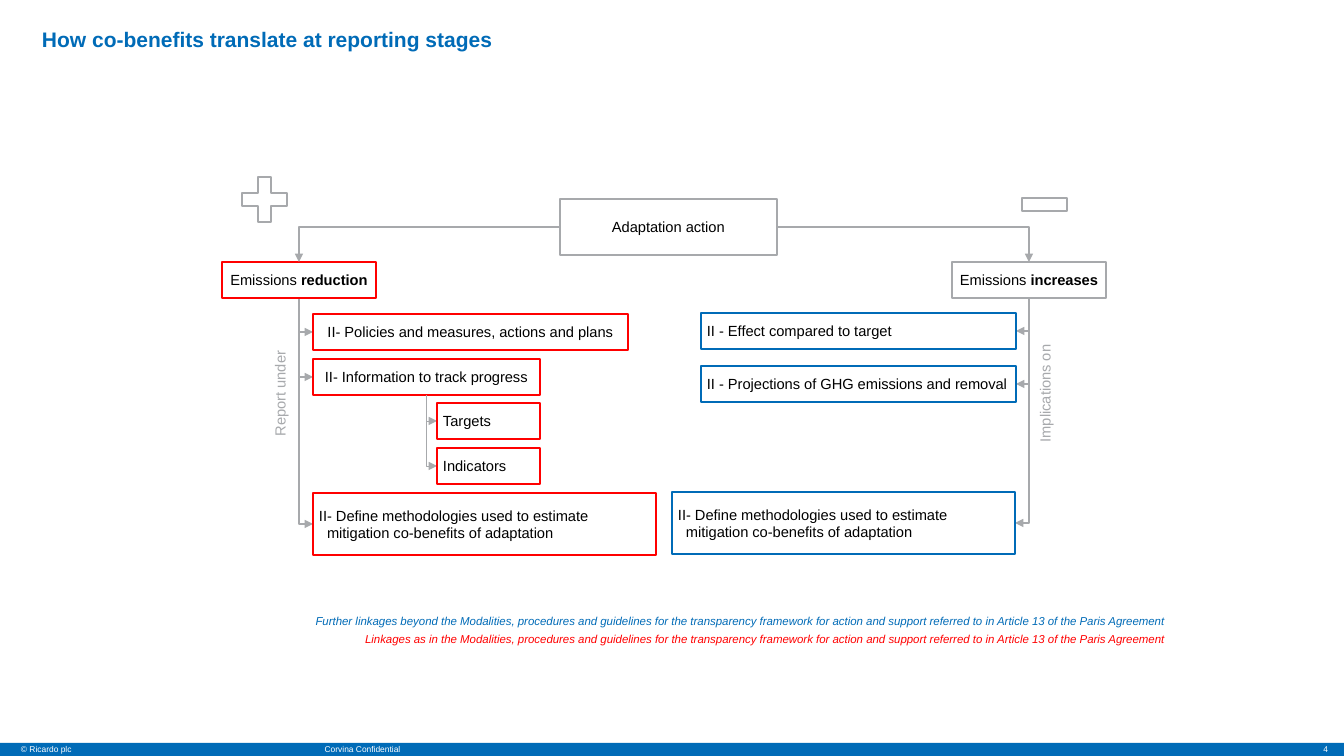
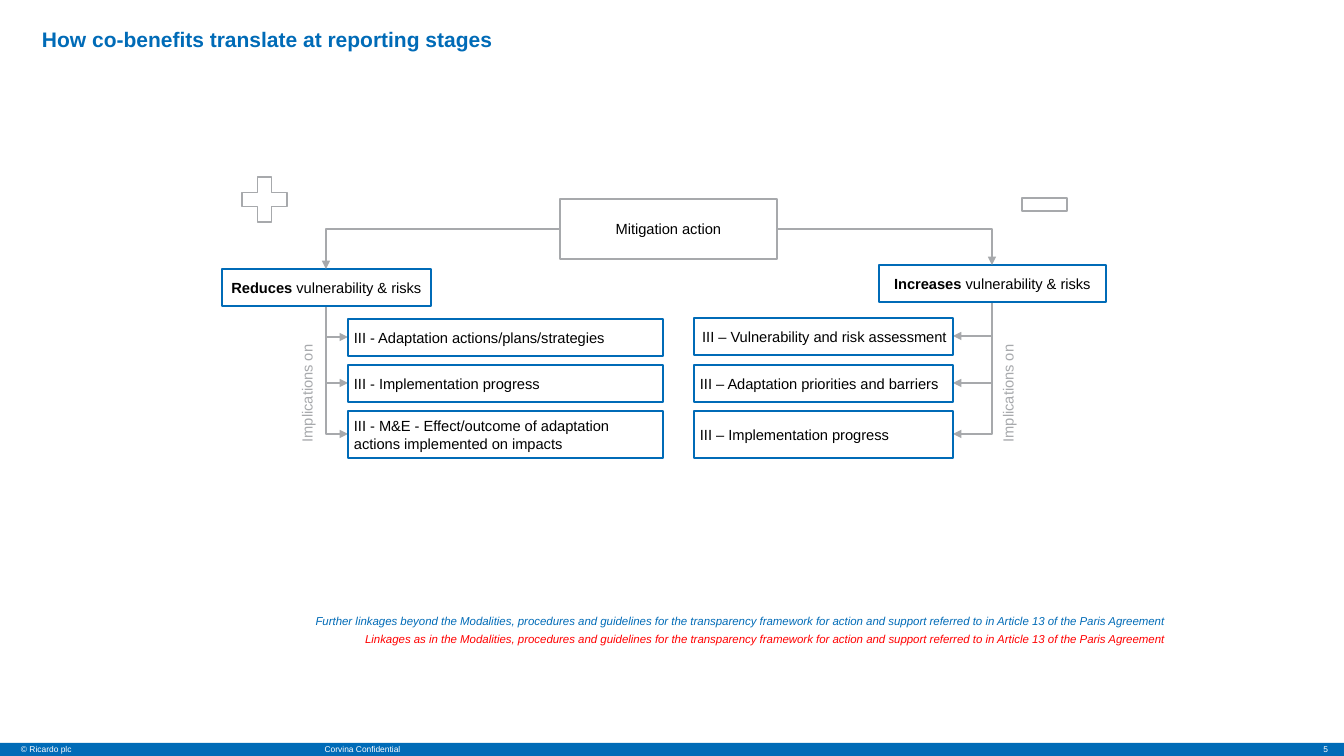
from dataclasses import dataclass

from lxml import etree
from pptx import Presentation
from pptx import util as u
from pptx.dml import color
from pptx.enum import shapes, text
from pptx.oxml import ns

SCALE = 12192000 / 1344
FONT = "Arial"
BLUE, RED, GREY, BLACK, WHITE = "006BB7", "FF0000", "A7A9AC", "000000", "FFFFFF"
LEFT, CENTER, RIGHT = text.PP_ALIGN.LEFT, text.PP_ALIGN.CENTER, text.PP_ALIGN.RIGHT
TITLE = "How co-benefits translate at reporting stages"
METHODS = "II- Define methodologies used to estimate mitigation co-benefits of adaptation"
SCOPE = (
    "the Modalities, procedures and guidelines for the transparency framework "
    "for action and support referred to in Article 13 of the Paris Agreement"
)


@dataclass
class Box:
    """A rectangle in px."""

    left: int
    top: int
    width: int
    height: int

    @property
    def center(self):
        """Return the horizontal middle."""
        return self.left + self.width // 2

    @property
    def middle(self):
        """Return the vertical middle."""
        return self.top + self.height // 2

    @property
    def right(self):
        """Return the right edge."""
        return self.left + self.width

    @property
    def bottom(self):
        """Return the bottom edge."""
        return self.top + self.height

    def inner(self, left, top, width, height):
        """Return a box placed relative to this one."""
        return Box(self.left + left, self.top + top, width, height)

    def emu(self):
        """Return left, top, width and height in EMU."""
        return [px(n) for n in (self.left, self.top, self.width, self.height)]


def px(length):
    """Turn px into EMU."""
    return u.Emu(round(length * SCALE))


def rgb(code):
    """Turn a hex string into a colour."""
    return color.RGBColor.from_string(code)


def write(frame, words, size=10.5, tint=BLACK, align=LEFT, bold=False, italic=False,
          anchor=text.MSO_ANCHOR.TOP, wrap=True, insets=(0, 0), spacing=None, hang=0):
    """Fill a frame with one paragraph; words between asterisks are bold."""
    frame.auto_size = text.MSO_AUTO_SIZE.NONE
    frame.word_wrap = wrap
    frame.vertical_anchor = anchor
    frame.margin_left = frame.margin_right = px(insets[0])
    frame.margin_top = frame.margin_bottom = px(insets[1])
    para = frame.paragraphs[0]
    para.alignment = align
    para.line_spacing = spacing
    if hang:
        props = para._p.get_or_add_pPr()
        props.set("marL", str(px(hang)))
        props.set("indent", str(-px(hang)))
    for index, piece in enumerate(words.split("*")):
        if piece:
            span = para.add_run()
            span.text = piece
            font = span.font
            font.name, font.size = FONT, u.Pt(size)
            font.bold, font.italic = bold or index % 2 == 1, italic
            font.color.rgb = rgb(tint)


def label(page, box, words, **style):
    """Place a text box."""
    frame = page.shapes.add_textbox(*box.emu()).text_frame
    write(frame, words, **style)
    return frame


def panel(page, box, fill=WHITE, line=None, weight=1, kind=shapes.MSO_SHAPE.RECTANGLE):
    """Place a flat shape."""
    shape = page.shapes.add_shape(kind, *box.emu())
    shape.shadow.inherit = False
    shape.fill.solid()
    shape.fill.fore_color.rgb = rgb(fill)
    if line:
        shape.line.color.rgb = rgb(line)
        shape.line.width = u.Pt(weight)
    else:
        shape.line.fill.background()
    return shape


def node(page, box, words, line, **style):
    """Place an outlined box with text."""
    style = {"wrap": False, "insets": (6, 6), "anchor": text.MSO_ANCHOR.MIDDLE, **style}
    write(panel(page, box, line=line).text_frame, words, **style)


def elbow(page, start, end, weight, arrow="tailEnd"):
    """Draw a line that runs across from start, then up or down to end."""
    points = [px(n) for n in (*start, *end)]
    link = page.shapes.add_connector(shapes.MSO_CONNECTOR.ELBOW, *points)
    link.line.color.rgb = rgb(GREY)
    link.line.width = u.Pt(weight)
    props = link._element.spPr
    props.find(ns.qn("a:prstGeom")).set("prst", "bentConnector2")
    etree.SubElement(props.find(ns.qn("a:ln")), ns.qn(f"a:{arrow}"), type="triangle")
    etree.SubElement(props, ns.qn("a:effectLst"))


def fork(page, parent, children, weight):
    """Link the bottom of a parent box to the near side of each child."""
    for child in children:
        side = child.left if child.left > parent.center else child.right
        elbow(page, (side, child.middle), (parent.center, parent.bottom), weight, "headEnd")


def branch(page, area, head, rows, caption, weight):
    """Place a heading, its rows and its vertical caption; return the boxes."""
    place, words, line = head
    parent = area.inner(*place)
    boxes = [area.inner(*row[0]) for row in rows]
    fork(page, parent, boxes, weight)
    node(page, parent, words, line, align=CENTER)
    for box, (_, entry, tint, style) in zip(boxes, rows):
        node(page, box, entry, tint, **style)
    left, note = caption
    frame = label(page, area.inner(left, 133, 24, 167), note, tint=GREY,
                  align=CENTER, insets=(3, 3))
    frame._txBody.bodyPr.set("vert", "vert270")
    return parent, boxes


def diagram(page, area, action, height, branches, weight):
    """Place the action, its signs and both branches; return the row boxes."""
    plus = panel(page, area.inner(20, 0, 45, 45), line=GREY, weight=weight,
                 kind=shapes.MSO_SHAPE.CROSS)
    plus.adjustments[0] = 0.35
    panel(page, area.inner(800, 21, 45, 13), line=GREY, weight=weight)
    root = area.inner(338, 22, 217, height)
    node(page, root, action, GREY, align=CENTER)
    placed = []
    for pieces in branches:
        parent, boxes = branch(page, area, *pieces, weight)
        side = root.left if parent.center < root.left else root.right
        elbow(page, (side, root.middle), (parent.center, parent.top), weight)
        placed.append(boxes)
    return placed


def legend(page, box):
    """Place the two notes on line colours."""
    notes = (("Further linkages beyond ", BLUE), ("Linkages as in ", RED))
    for index, (start, tint) in enumerate(notes):
        label(page, box.inner(0, 18 * index, box.width, 24), start + SCOPE, size=8.2,
              tint=tint, italic=True, align=RIGHT, insets=(10, 5))


def footer(page, box, number):
    """Place the bottom band."""
    panel(page, box, fill=BLUE)
    entries = (
        (21, 146, "© Ricardo plc", LEFT),
        (167, 391, "Corvina Confidential", CENTER),
        (1290, 38, str(number), RIGHT),
    )
    for left, width, words, align in entries:
        label(page, box.inner(left, 0, width, box.height), words, size=6, tint=WHITE,
              align=align, anchor=text.MSO_ANCHOR.MIDDLE, spacing=0.9)


def new_page(deck, number):
    """Add a slide with title, legend and footer."""
    page = deck.slides.add_slide(deck.slide_layouts[5])
    title = page.shapes.title
    title.left, title.top, title.width, title.height = Box(42, 27, 1106, 25).emu()
    write(title.text_frame, TITLE, size=15, tint=BLUE, bold=True)
    legend(page, Box(264, 609, 911, 42))
    footer(page, Box(0, 743, 1344, 13), number)
    return page


def adaptation_page(deck, area):
    """Build the slide on adaptation actions."""
    page = new_page(deck, 4)
    middle, hanging = {"align": CENTER}, {"wrap": True, "hang": 8}
    reduction = (
        ((0, 85, 154, 36), "Emissions *reduction*", RED),
        [
            ((91, 137, 315, 36), "II- Policies and measures, actions and plans", RED, middle),
            ((91, 182, 227, 36), "II- Information to track progress", RED, middle),
            ((91, 316, 343, 62), METHODS, RED, hanging),
        ],
        (46, "Report under"),
    )
    increase = (
        ((730, 85, 154, 36), "Emissions *increases*", GREY),
        [
            ((479, 136, 315, 36), "II - Effect compared to target", BLUE, {}),
            ((479, 189, 315, 36), "II - Projections of GHG emissions and removal", BLUE, {}),
            ((450, 315, 343, 62), METHODS, BLUE, hanging),
        ],
        (811, "Implications on"),
    )
    rows, _ = diagram(page, area, "Adaptation action", 56, (reduction, increase), 1.5)
    details = [area.inner(215, top, 103, 36) for top in (226, 271)]
    fork(page, rows[1], details, 0.5)
    for box, words in zip(details, ("Targets", "Indicators")):
        node(page, box, words, RED)


def mitigation_page(deck, area):
    """Build the slide on mitigation actions."""
    page = new_page(deck, 5)
    reduces = (
        ((0, 92, 209, 37), "*Reduces* vulnerability & risks", BLUE),
        [
            ((126, 142, 315, 37), "III - Adaptation actions/plans/strategies", BLUE, {}),
            ((126, 188, 315, 37), "III - Implementation progress", BLUE, {}),
            ((126, 234, 315, 47),
             "III - M&E - Effect/outcome of adaptation actions implemented on impacts",
             BLUE, {"wrap": True}),
        ],
        (73, "Implications on"),
    )
    increases = (
        ((657, 88, 227, 37), "*Increases* vulnerability & risks", BLUE),
        [
            ((472, 141, 259, 37), "III – Vulnerability and risk assessment", BLUE,
             {"align": RIGHT}),
            ((472, 188, 259, 37), "III – Adaptation priorities and barriers", BLUE, {}),
            ((472, 234, 259, 47), "III – Implementation progress", BLUE, {}),
        ],
        (774, "Implications on"),
    )
    diagram(page, area, "Mitigation action", 60, (reduces, increases), 1)


def main():
    """Build and save the deck."""
    deck = Presentation()
    deck.slide_width, deck.slide_height = px(1344), px(756)
    area = Box(222, 177, 884, 378)
    adaptation_page(deck, area)
    mitigation_page(deck, area)
    deck.save("out.pptx")


if __name__ == "__main__":
    main()
